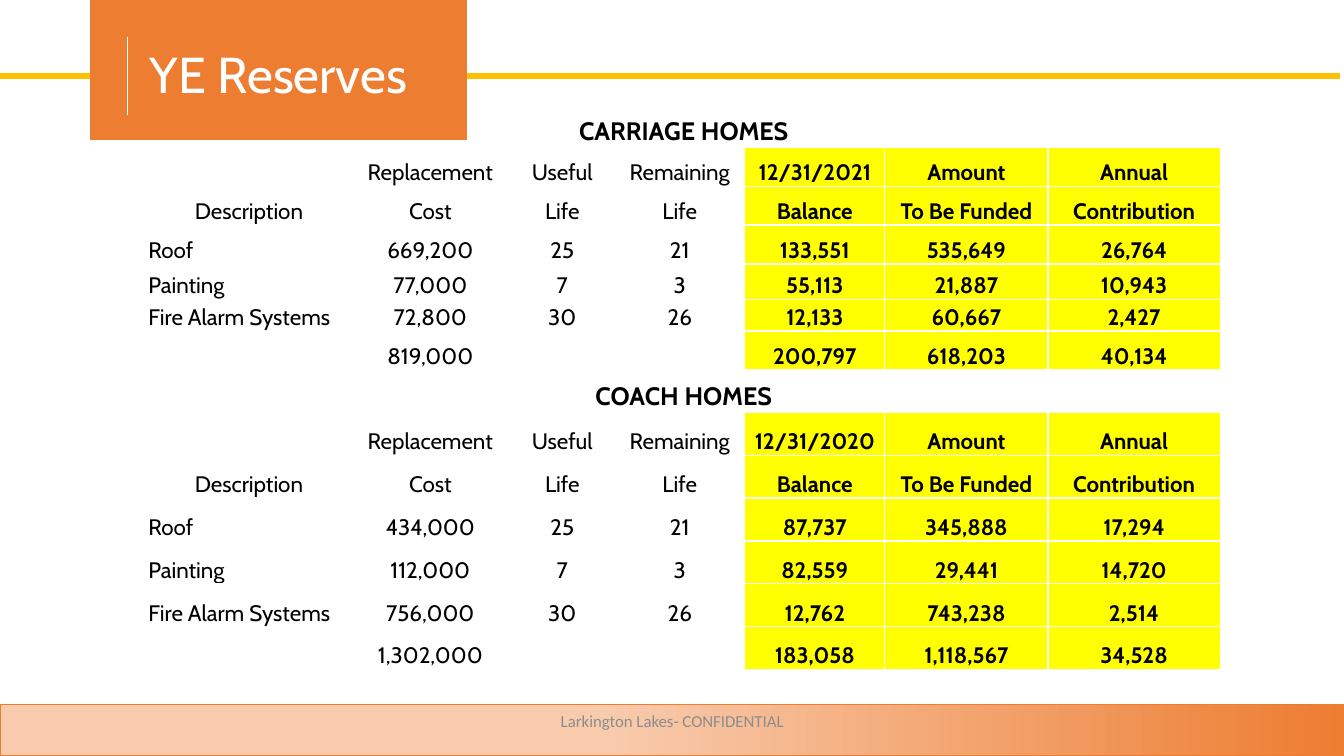
from lxml.etree import SubElement
from pptx import Presentation
from pptx.dml.color import RGBColor
from pptx.enum.shapes import MSO_CONNECTOR, MSO_SHAPE
from pptx.enum.text import MSO_ANCHOR, PP_ALIGN
from pptx.oxml.ns import qn
from pptx.util import Cm, Pt

ORANGE = RGBColor(0xED, 0x7D, 0x31)
PEACH = RGBColor(0xF8, 0xCB, 0xAD)
GOLD = RGBColor(0xFF, 0xC0, 0x00)
YELLOW = RGBColor(0xFF, 0xFF, 0x00)
WHITE = RGBColor(0xFF, 0xFF, 0xFF)
BLACK = RGBColor(0x00, 0x00, 0x00)
GRAY = RGBColor(0x8C, 0x8C, 0x8C)

COLUMN_WIDTHS = (5.13, 4.01, 2.64, 3.28, 3.53, 4.11, 4.34)
FIRST_FUNDING_COLUMN = 4
TITLE_ROW = 0.81
CELL_FORMAT = {
    "margin_left": Cm(0.03), "margin_right": Cm(0.03),
    "margin_top": Cm(0.03), "margin_bottom": 0,
    "vertical_anchor": MSO_ANCHOR.BOTTOM,
}

CARRIAGE_HOMES = (
    ("Roof", "669,200", "25", "21", "133,551", "535,649", "26,764"),
    ("Painting", "77,000", "7", "3", "55,113", "21,887", "10,943"),
    ("Fire Alarm Systems", "72,800", "30", "26", "12,133", "60,667", "2,427"),
    ("", "819,000", "", "", "200,797", "618,203", "40,134"),
)
COACH_HOMES = (
    ("Roof", "434,000", "25", "21", "87,737", "345,888", "17,294"),
    ("Painting", "112,000", "7", "3", "82,559", "29,441", "14,720"),
    ("Fire Alarm Systems", "756,000", "30", "26", "12,762", "743,238", "2,514"),
    ("", "1,302,000", "", "", "183,058", "1,118,567", "34,528"),
)


def apply_format(target, values):
    """Set each named attribute of the target."""
    for name, value in values.items():
        setattr(target, name, value)


def write(frame, text, align, color, **font):
    """Put one formatted run of text into the frame."""
    paragraph = frame.paragraphs[0]
    paragraph.alignment = align
    run = paragraph.add_run()
    run.text = text
    apply_format(run.font, font)
    run.font.color.rgb = color


def add_rule(slide, start, end, color, weight):
    """Draw a straight line without shadow."""
    rule = slide.shapes.add_connector(
        MSO_CONNECTOR.STRAIGHT, *(Cm(n) for n in (*start, *end)))
    rule.line.color.rgb = color
    rule.line.width = Pt(weight)
    SubElement(rule._element.spPr, qn("a:effectLst"))


def add_panel(slide, box, weight):
    """Draw a rectangle outlined in orange."""
    panel = slide.shapes.add_shape(MSO_SHAPE.RECTANGLE, *(Cm(n) for n in box))
    panel.shadow.inherit = False
    panel.line.color.rgb = ORANGE
    panel.line.width = Pt(weight)
    return panel


def add_label(slide, box, text, align, color, **font):
    """Add a vertically centred text box."""
    frame = slide.shapes.add_textbox(*(Cm(n) for n in box)).text_frame
    apply_format(frame, {"word_wrap": True, "vertical_anchor": MSO_ANCHOR.MIDDLE})
    write(frame, text, align, color, **font)


def add_borders(cell):
    """Give all four sides of the cell a thin white line."""
    properties = cell._tc.get_or_add_tcPr()
    for side in ("a:lnL", "a:lnR", "a:lnT", "a:lnB"):
        line = SubElement(properties, qn(side), w=str(Pt(1)))
        fill = SubElement(line, qn("a:solidFill"))
        SubElement(fill, qn("a:srgbClr"), val=str(WHITE))


def add_reserves(slide, left, top, title, date, items, row_heights):
    """Build one reserve table with its title and two header rows."""
    rows = (
        (title,) + ("",) * (len(COLUMN_WIDTHS) - 1),
        ("", "Replacement", "Useful", "Remaining", date, "Amount", "Annual"),
        ("Description", "Cost", "Life", "Life", "Balance", "To Be Funded", "Contribution"),
        *items,
    )
    heights = (TITLE_ROW, *row_heights)
    table = slide.shapes.add_table(
        len(rows), len(COLUMN_WIDTHS), Cm(left), Cm(top),
        Cm(sum(COLUMN_WIDTHS)), Cm(sum(heights))).table
    apply_format(table, {"first_row": False, "horz_banding": False})
    for column, width in zip(table.columns, COLUMN_WIDTHS):
        column.width = Cm(width)
    for r, (values, height) in enumerate(zip(rows, heights)):
        table.rows[r].height = Cm(height)
        for c, value in enumerate(values):
            cell = table.cell(r, c)
            apply_format(cell, CELL_FORMAT)
            add_borders(cell)
            funding = r > 0 and c >= FIRST_FUNDING_COLUMN
            if funding:
                cell.fill.solid()
                cell.fill.fore_color.rgb = YELLOW
            else:
                cell.fill.background()
            if value:
                item_name = c == 0 and r > 2
                write(cell.text_frame, value,
                      PP_ALIGN.LEFT if item_name else PP_ALIGN.CENTER, BLACK,
                      name="Cabin", size=Pt(16 if r else 18),
                      bold=funding or r == 0)
    table.cell(0, 0).merge(table.cell(0, len(COLUMN_WIDTHS) - 1))


def add_title(slide, left, top, width, height):
    """Place the orange title block with its upright rule."""
    block = add_panel(slide, (left, top, width, height), 0.5)
    block.fill.solid()
    block.fill.fore_color.rgb = ORANGE
    add_label(slide, (left + 1.24, top + 0.9, width - 1.3, 1.9), "YE Reserves",
              PP_ALIGN.LEFT, WHITE, name="Cabin", size=Pt(36))
    rule_x = left + 0.91
    add_rule(slide, (rule_x, top + 0.94), (rule_x, top + 2.9), WHITE, 0.5)


def add_footer(slide, left, top, width, height):
    """Place the gradient band with the confidentiality line."""
    band = add_panel(slide, (left, top, width, height), 1)
    band.fill.gradient()
    band.fill.gradient_angle = 0
    for stop, position, color in zip(band.fill.gradient_stops, (0.45, 1), (PEACH, ORANGE)):
        stop.position = position
        stop.color.rgb = color
    add_label(slide, (left + 11.23, top - 0.1, 11.43, 1.02),
              "Larkington Lakes- CONFIDENTIAL", PP_ALIGN.CENTER, GRAY,
              name="Calibri", size=Pt(12))


def main():
    """Build and save the slide."""
    presentation = Presentation()
    apply_format(presentation, {"slide_width": Cm(33.87), "slide_height": Cm(19.05)})
    slide = presentation.slides.add_slide(presentation.slide_layouts[6])
    add_rule(slide, (-0.13, 1.91), (33.78, 1.91), GOLD, 4.5)
    add_reserves(slide, 3.71, 2.9, "CARRIAGE HOMES", "12/31/2021", CARRIAGE_HOMES,
                 (0.98, 0.98, 0.98, 0.89, 0.8, 0.98))
    add_reserves(slide, 3.71, 9.58, "COACH HOMES", "12/31/2020", COACH_HOMES,
                 (1.08,) * 6)
    add_title(slide, 2.29, 0, 9.47, 3.51)
    add_footer(slide, 0, 17.75, 33.87, 1.3)
    presentation.save("out.pptx")


if __name__ == "__main__":
    main()
